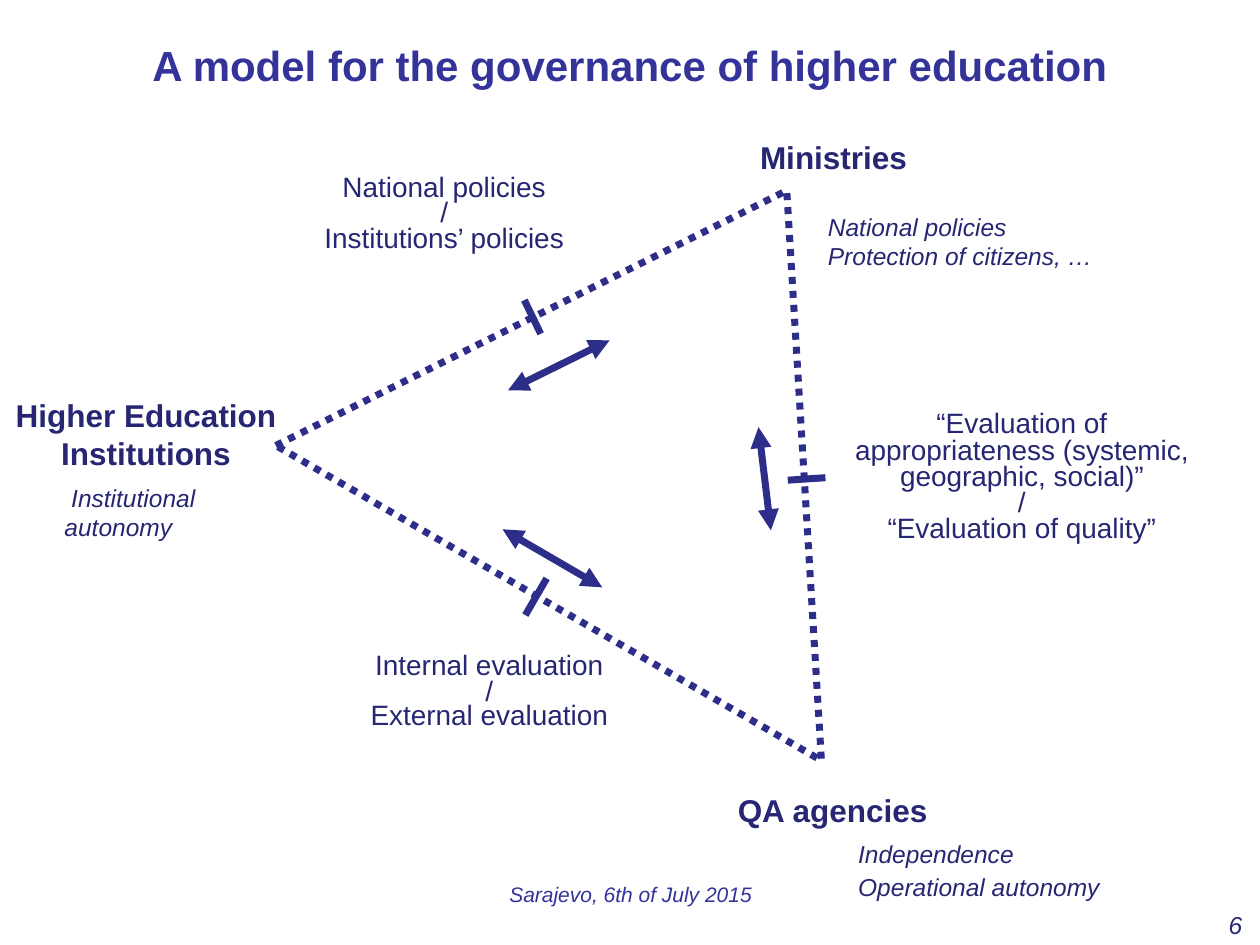
import lxml.etree
import pptx
import pptx.dml.color
import pptx.enum.dml
import pptx.enum.shapes
import pptx.enum.text
import pptx.oxml.ns
import pptx.util

Cm = pptx.util.Cm
Pt = pptx.util.Pt
Align = pptx.enum.text.PP_ALIGN
Anchor = pptx.enum.text.MSO_ANCHOR

NAVY = pptx.dml.color.RGBColor(0x26, 0x26, 0x73)
INDIGO = pptx.dml.color.RGBColor(0x33, 0x33, 0x99)
LINE_BLUE = pptx.dml.color.RGBColor(0x2D, 0x2D, 0x8A)
LINE_WIDTH = Pt(4)

ACTORS = [
    ("Ministries", (14.05, 2.79, 5.51, 0.71)),
    ("Higher Education Institutions", (0, 7.98, 5.89, 1.47)),
    ("QA agencies", (13.89, 15.95, 5.79, 0.71)),
]
RELATIONS = [
    (["National policies", "/", "Institutions’ policies"], [14, 14, 15], (6.2, 3.61, 5.51, 1.52)),
    (["Internal evaluation", "/", "External evaluation"], [14, 15, 14], (7.11, 13.23, 5.51, 1.55)),
    (["“Evaluation of appropriateness (systemic, geographic, social)”", "/",
      "“Evaluation of quality”"], [15, 15, 15], (16.89, 8.33, 7.42, 2.67)),
]
ROLES = [
    (["National policies \vProtection of citizens, …"], (16.69, 4.27, 8.28, 1.12)),
    ([" Institutional autonomy"], (1.3, 9.73, 3.99, 1.12)),
    (["Independence", "Operational autonomy"], (17.3, 16.92, 6.99, 1.19)),
]
SIDE_MARKS = [
    ((10.57, 6.05, 10.9, 6.73), (10.24, 7.87, 12.29, 6.86)),
    ((16.64, 9.63, 15.88, 9.68), (15.29, 8.61, 15.54, 10.69)),
    ((11.02, 11.66, 10.59, 12.4), (10.13, 10.67, 12.14, 11.84)),
]


def add_text(slide, texts, area, size, color=NAVY, bold=False, italic=False,
             align=Align.CENTER, anchor=Anchor.TOP, inset=0, spacings=None, gap=0):
    """Add a wrapped text box with one paragraph for each text."""
    box = slide.shapes.add_textbox(*map(Cm, area))
    frame = box.text_frame
    frame.word_wrap = True
    frame.vertical_anchor = anchor
    frame.margin_left = frame.margin_right = Cm(inset)
    frame.margin_top = frame.margin_bottom = Cm(inset)
    for index, text in enumerate(texts):
        para = frame.add_paragraph() if index else frame.paragraphs[0]
        para.text = text
        para.alignment = align
        if spacings:
            para.line_spacing = Pt(spacings[index])
        if index and gap:
            para.space_before = Pt(gap)
        font = para.font
        font.name = "Arial"
        font.size = Pt(size)
        font.bold = bold
        font.italic = italic
        font.color.rgb = color


def add_triangle(slide):
    """Add the dotted triangle that joins the three actors."""
    triangle = slide.shapes.add_shape(
        pptx.enum.shapes.MSO_SHAPE.ISOSCELES_TRIANGLE, Cm(7.11), Cm(3.2), Cm(12.7), Cm(9.6))
    triangle.rotation = 30
    triangle.shadow.inherit = False
    triangle.fill.background()
    triangle.line.color.rgb = LINE_BLUE
    triangle.line.width = LINE_WIDTH
    triangle.line.dash_style = pptx.enum.dml.MSO_LINE.ROUND_DOT


def add_line(shapes, ends, arrows=False):
    """Add a straight line, with arrowheads at both ends if asked."""
    line = shapes.add_connector(pptx.enum.shapes.MSO_CONNECTOR.STRAIGHT, *map(Cm, ends))
    line.line.color.rgb = LINE_BLUE
    line.line.width = LINE_WIDTH
    if arrows:
        outline = line.line._get_or_add_ln()
        for end in ("a:headEnd", "a:tailEnd"):
            lxml.etree.SubElement(outline, pptx.oxml.ns.qn(end), type="triangle")
    lxml.etree.SubElement(line._element.spPr, pptx.oxml.ns.qn("a:effectLst"))


def add_side_mark(slide, tick, arrow):
    """Group the tick on a triangle side with its double arrow."""
    group = slide.shapes.add_group_shape()
    add_line(group.shapes, tick)
    add_line(group.shapes, arrow, arrows=True)


def main():
    """Build the governance slide and save it."""
    deck = pptx.Presentation()
    deck.slide_width, deck.slide_height = Cm(25.4), Cm(19.05)
    slide = deck.slides.add_slide(deck.slide_layouts[6])

    add_triangle(slide)
    for tick, arrow in SIDE_MARKS:
        add_side_mark(slide, tick, arrow)
    add_text(slide, ["A model for the governance of higher education"],
             (0, -0.1, 25.4, 2.82), 24, INDIGO, bold=True, anchor=Anchor.MIDDLE)
    for name, area in ACTORS:
        add_text(slide, [name], area, 18, bold=True)
    for texts, spacings, area in RELATIONS:
        add_text(slide, texts, area, 16, spacings=spacings)
    for texts, area in ROLES:
        add_text(slide, texts, area, 14, italic=True, align=Align.LEFT, gap=2)
    add_text(slide, ["Sarajevo, 6th of July 2015"], (8.69, 17.78, 8.05, 0.74), 12, INDIGO, italic=True)
    add_text(slide, ["6"], (19.89, 18.21, 5.28, 0.81), 14, italic=True, align=Align.RIGHT, inset=0.13)
    deck.save("out.pptx")


if __name__ == "__main__":
    main()
